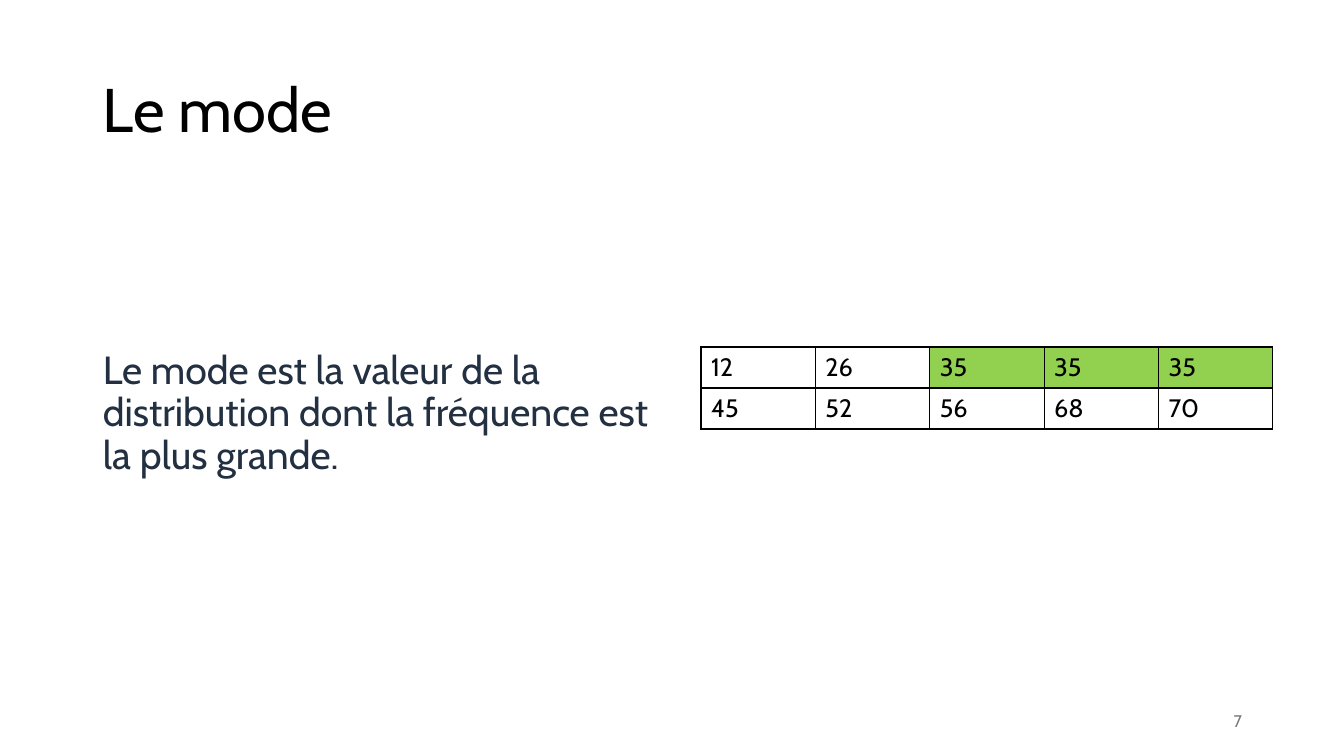
from lxml.etree import SubElement
from pptx import Presentation
from pptx.dml.color import RGBColor
from pptx.enum.text import MSO_ANCHOR, PP_ALIGN
from pptx.oxml.ns import qn
from pptx.util import Pt

BLACK = RGBColor(0x00, 0x00, 0x00)
NAVY = RGBColor(0x22, 0x30, 0x42)
GREY = RGBColor(0x79, 0x79, 0x79)
GREEN = RGBColor(0x92, 0xD0, 0x50)
WHITE = RGBColor(0xFF, 0xFF, 0xFF)
FONT = "Cabin"
SCALE = 9071  # EMU per px

# text, box in px, font size, colour, paragraph format, bottom inset in px
TEXTS = [
    ("Le mode", (93, 40, 1159, 146), 44, BLACK, {"line_spacing": 0.9}, 5),
    ("Le mode est la valeur de la distribution dont la fréquence est la plus grande.",
     (93, 202, 572, 480), 28, NAVY,
     {"line_spacing": 0.9, "space_before": Pt(10)}, 61),
    ("7", (950, 701, 302, 40), 12, GREY, {"alignment": PP_ALIGN.RIGHT}, 5),
]
VALUES = [(12, 26, 35, 35, 35), (45, 52, 56, 68, 70)]
MODE = 35
GRID = (701, 347, 572, 82)


def px(n):
    return round(n * SCALE)


def style(par, size, color, form):
    for name, value in form.items():
        setattr(par, name, value)
    for name, value in {"name": FONT, "size": Pt(size)}.items():
        setattr(par.font, name, value)
    par.font.color.rgb = color


def add_text(slide, text, box, size, color, form, inset):
    frame = slide.shapes.add_textbox(*map(px, box)).text_frame
    frame.word_wrap = True
    frame.vertical_anchor = MSO_ANCHOR.MIDDLE
    frame.margin_bottom = px(inset)
    frame.text = text
    style(frame.paragraphs[0], size, color, form)


def border(cell):
    """Draw a thin black line on all four sides, ahead of the cell's fill."""
    props = cell._tc.get_or_add_tcPr()
    for i, side in enumerate(("lnL", "lnR", "lnT", "lnB")):
        line = SubElement(props, qn("a:" + side), w=str(Pt(1)))
        fill = SubElement(line, qn("a:solidFill"))
        SubElement(fill, qn("a:srgbClr"), val=str(BLACK))
        props.insert(i, line)


def add_grid(slide):
    rows, cols = len(VALUES), len(VALUES[0])
    table = slide.shapes.add_table(rows, cols, *map(px, GRID)).table
    table.first_row = table.horz_banding = False
    for r, row in enumerate(VALUES):
        for c, value in enumerate(row):
            cell = table.cell(r, c)
            cell.text = str(value)
            cell.vertical_anchor = MSO_ANCHOR.MIDDLE
            style(cell.text_frame.paragraphs[0], 18, BLACK, {})
            if value == MODE:
                cell.fill.solid()
                cell.fill.fore_color.rgb = GREEN
            else:
                cell.fill.background()
            border(cell)


def main():
    deck = Presentation()
    deck.slide_width, deck.slide_height = px(1344), px(756)
    slide = deck.slides.add_slide(deck.slide_layouts[6])
    slide.background.fill.solid()
    slide.background.fill.fore_color.rgb = WHITE
    for item in TEXTS:
        add_text(slide, *item)
    add_grid(slide)
    deck.save("out.pptx")


if __name__ == "__main__":
    main()
